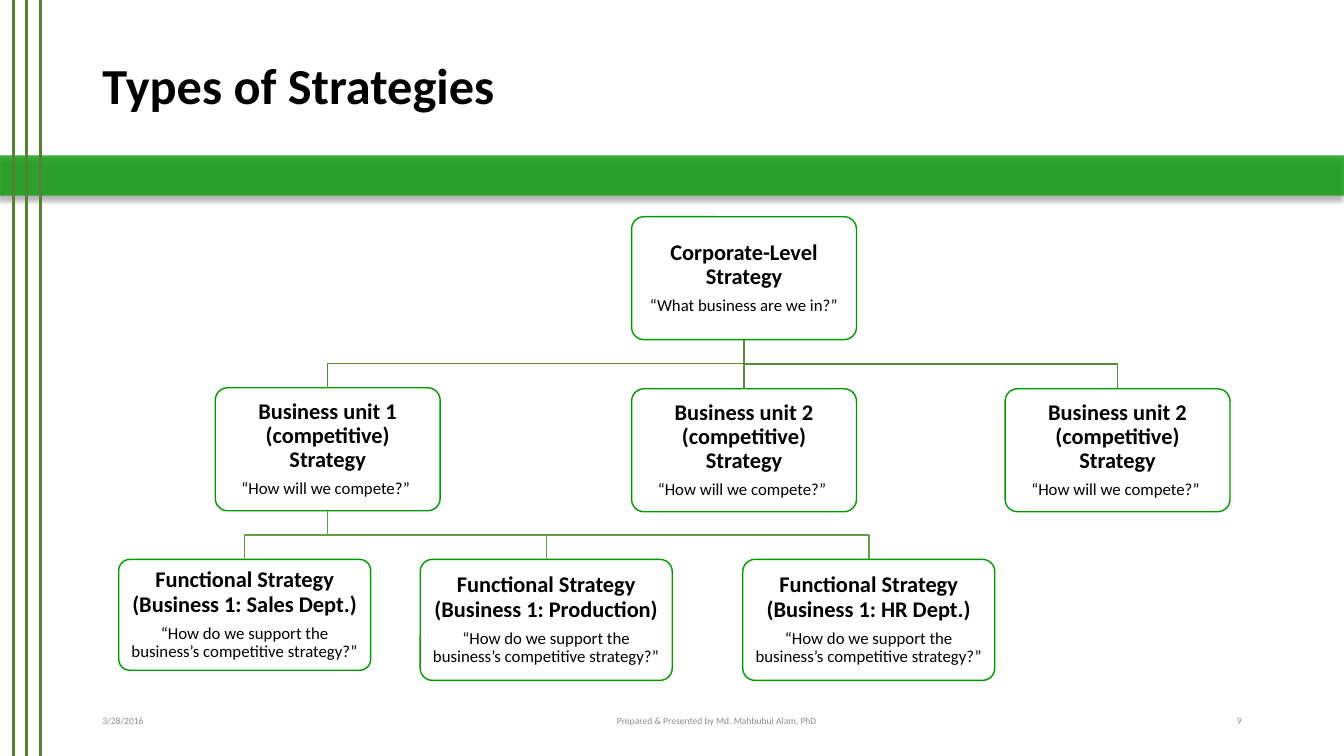
from lxml.etree import SubElement
from pptx import Presentation
from pptx.dml.color import RGBColor
from pptx.enum.shapes import MSO_CONNECTOR, MSO_SHAPE
from pptx.enum.text import MSO_ANCHOR, PP_ALIGN
from pptx.oxml.ns import qn
from pptx.util import Pt

HUES = {"band": "009900", "rail": "548235", "upper": "5A8B39",
        "lower": "669D40", "text": "000000", "foot": "8C8C8C"}
ASK = "“How will we compete?” "
HELP = "“How do we support the business’s competitive strategy?”"
UNIT = (160.6, 87.8)
DEPT = (180, 86.4)
BOXES = [
    ("Corporate-Level Strategy", "“What business are we in?”", 451.2, 154.8, UNIT, None, None),
    ("Business unit 1 (competitive) Strategy", ASK, 153.8, 277, UNIT, 0, "upper"),
    ("Business unit 2 (competitive) Strategy", ASK, 451.2, 277.7, UNIT, 0, "upper"),
    ("Business unit 2 (competitive) Strategy", ASK, 718, 277.7, UNIT, 0, "upper"),
    ("Functional Strategy (Business 1: Sales Dept.)", HELP, 84.8, 399.6, (180, 79.2), 1, "lower"),
    ("Functional Strategy (Business 1: Production)", HELP, 300.2, 399.6, DEPT, 1, "lower"),
    ("Functional Strategy (Business 1: HR Dept.)", HELP, 530.6, 399.6, DEPT, 1, "lower"),
]


def style(para, size, hue, align, bold=False):
    para.alignment = align
    font = para.font
    font.name, font.size, font.bold = "Calibri", Pt(size), bold
    font.color.rgb = RGBColor.from_string(HUES[hue])


def draw_line(x1, y1, x2, y2, hue, width):
    line = slide.shapes.add_connector(MSO_CONNECTOR.STRAIGHT, x1, y1, x2, y2)
    line.line.color.rgb = RGBColor.from_string(HUES[hue])
    line.line.width = Pt(width)
    SubElement(line._element.spPr, qn("a:effectLst"))
    return line


deck = Presentation()
deck.slide_width, deck.slide_height = Pt(960), Pt(540)
slide = deck.slides.add_slide(deck.slide_layouts[5])
shapes = slide.shapes

band = shapes.add_shape(MSO_SHAPE.RECTANGLE, 0, Pt(111), Pt(960), Pt(28.8))
band.fill.solid()
band.fill.fore_color.rgb = RGBColor.from_string(HUES["band"])
band.line.fill.background()
props = band._element.spPr
tint = props.find(qn("a:solidFill")).find(qn("a:srgbClr"))
SubElement(tint, qn("a:alpha"), val="75000")
glow = SubElement(SubElement(props, qn("a:effectLst")), qn("a:outerShdw"),
                  blurRad=str(Pt(4)), dist=str(Pt(3)), dir="8100000", rotWithShape="0")
shade = SubElement(glow, qn("a:srgbClr"), val=HUES["text"])
SubElement(shade, qn("a:alpha"), val="40000")

for step in range(3):
    x = Pt(9.6 + 9.6 * step)
    draw_line(x, 0, x, Pt(540), "rail", 2.25)

title = shapes.title
title.left, title.top, title.width, title.height = Pt(66), Pt(28.8), Pt(818), Pt(68.4)
title.text_frame.text = "Types of Strategies"
title.text_frame.vertical_anchor = MSO_ANCHOR.MIDDLE
para = title.text_frame.paragraphs[0]
style(para, 36, "text", PP_ALIGN.LEFT, True)
para.line_spacing = 0.9

for text, left, width, align in [
    ("3/28/2016", 66, 216, PP_ALIGN.LEFT),
    ("Prepared & Presented by Md. Mahbubul Alam, PhD", 350, 324, PP_ALIGN.CENTER),
    ("9", 823, 71, PP_ALIGN.RIGHT),
]:
    foot = shapes.add_textbox(Pt(left), Pt(500.4), Pt(width), Pt(28.8))
    frame = foot.text_frame
    frame.word_wrap = True
    frame.vertical_anchor = MSO_ANCHOR.MIDDLE
    frame.text = text
    style(frame.paragraphs[0], 6.8, "foot", align)

nodes = []
for name, query, left, top, (width, height), boss, hue in BOXES:
    box = shapes.add_shape(MSO_SHAPE.ROUNDED_RECTANGLE, Pt(left), Pt(top), Pt(width), Pt(height))
    box.adjustments[0] = 0.1
    box.shadow.inherit = False
    box.fill.background()
    box.line.color.rgb = RGBColor.from_string(HUES["band"])
    box.line.width = Pt(1)
    nodes.append(box)

    frame = box.text_frame
    frame.word_wrap = True
    frame.vertical_anchor = MSO_ANCHOR.MIDDLE
    frame.margin_left = frame.margin_right = frame.margin_top = frame.margin_bottom = Pt(5)
    frame.text = name + "\n" + query
    for para, size, bold in zip(frame.paragraphs, (16, 12), (True, False)):
        style(para, size, "text", PP_ALIGN.CENTER, bold)
        para.line_spacing = 0.9
        para.space_after = Pt(size * 0.35)

    if boss is None:
        continue
    head = nodes[boss]
    x1, y1 = head.left + head.width // 2, head.top + head.height
    x2, y2 = box.left + box.width // 2, box.top
    if x1 == x2:
        link = draw_line(x1, y1, x2, y2, hue, 1)
        link.begin_connect(head, 2)
        link.end_connect(box, 0)
        continue
    mid = (y1 + y2) // 2
    path = shapes.build_freeform(x1, y1)
    path.add_line_segments([(x1, mid), (x2, mid), (x2, y2)], close=False)
    link = path.convert_to_shape()
    link.shadow.inherit = False
    link.fill.background()
    link.line.color.rgb = RGBColor.from_string(HUES[hue])
    link.line.width = Pt(1)

deck.save("out.pptx")
